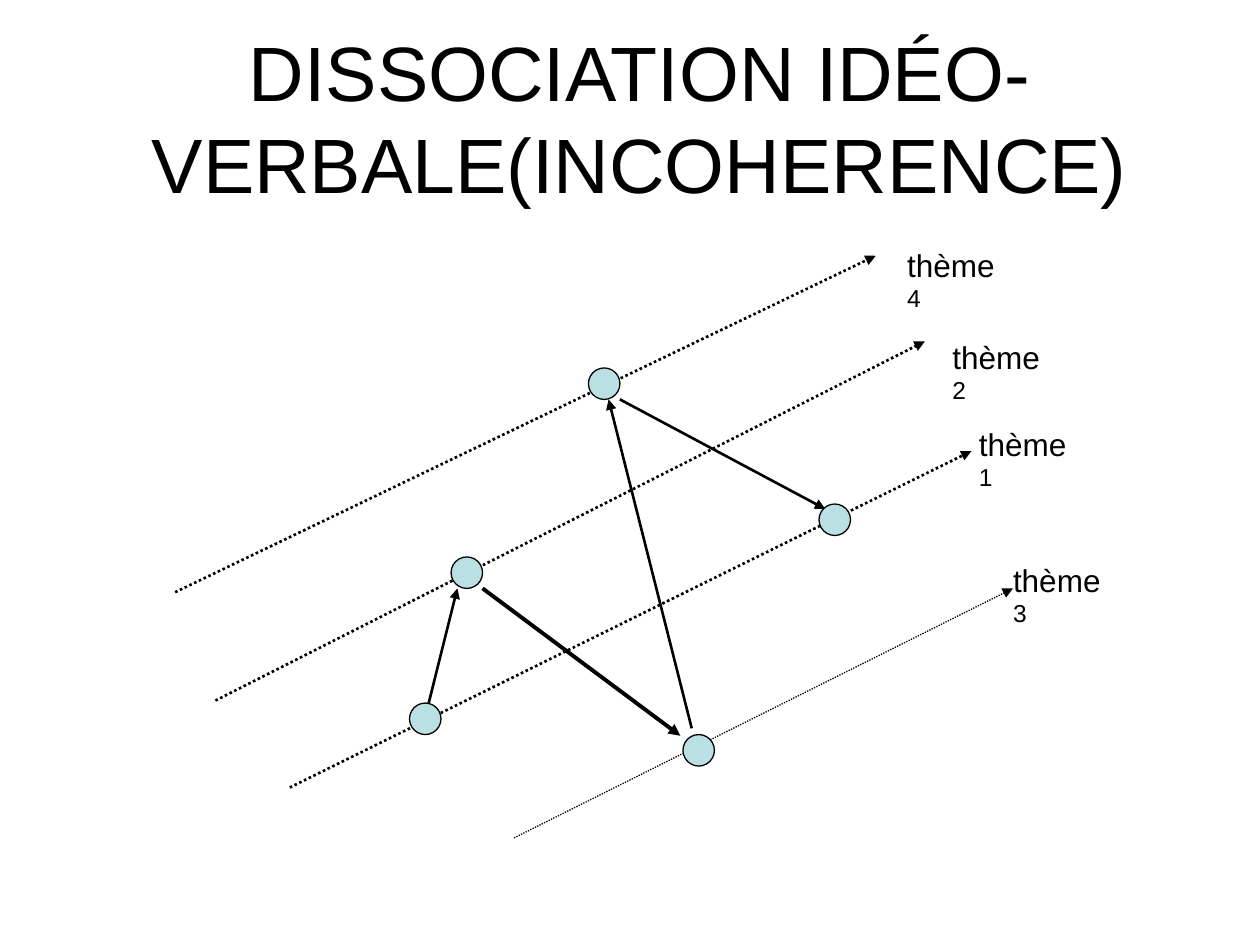
from dataclasses import dataclass

from lxml import etree
from pptx import Presentation
from pptx import util as u
from pptx.dml.color import RGBColor
from pptx.enum import dml, shapes, text
from pptx.oxml.ns import qn

SCALE = 9144  # EMU in one px, 100 px to the inch


@dataclass(frozen=True)
class Theme:
    font: str = "Arial"
    ink: RGBColor = RGBColor(0, 0, 0)
    fill: RGBColor = RGBColor(0xBB, 0xE0, 0xE3)
    title: int = 44
    label: int = 18
    digit: int = 14
    thin: float = 0.75
    line: float = 1.5
    bold: float = 2.25


THEME = Theme()

# number, start, end, label corner, line width
THEMES = [
    (1, (130, 475), (671, 208), (677, 187), THEME.line),
    (2, (71, 406), (634, 121), (656, 118), THEME.line),
    (3, (308, 515), (704, 317), (704, 295), THEME.thin),
    (4, (39, 320), (595, 53), (620, 45), THEME.line),
]
# start, end, line width, in the order of speech
JUMPS = [
    ((238, 417), (263, 317), THEME.line),
    ((283, 317), (440, 434), THEME.bold),
    ((449, 428), (383, 167), THEME.line),
    ((392, 167), (555, 254), THEME.line),
]
NODES = [(225, 408), (258, 292), (442, 433), (367, 142), (550, 250)]
NODE = 25


def px(*nums):
    return [u.Emu(n * SCALE) for n in nums]


def style(font, size):
    font.name = THEME.font
    font.size = u.Pt(size)
    font.color.rgb = THEME.ink


def add_run(para, words, size):
    run = para.add_run()
    run.text = words
    style(run.font, size)


def add_title(slide, box):
    head = slide.shapes.title
    head.left, head.top, head.width, head.height = px(*box)
    frame = head.text_frame
    frame.auto_size = text.MSO_AUTO_SIZE.NONE
    frame.vertical_anchor = text.MSO_ANCHOR.MIDDLE
    para = frame.paragraphs[0]
    para.alignment = text.PP_ALIGN.CENTER
    style(para.font, THEME.title)
    add_run(para, "DISSOCIATION IDÉO-VERBALE(INCOHERENCE)", THEME.title)
    para.add_line_break()


def add_arrow(slide, start, end, width, dotted=False):
    arrow = slide.shapes.add_connector(
        shapes.MSO_CONNECTOR.STRAIGHT, *px(*start, *end))
    arrow.line.color.rgb = THEME.ink
    arrow.line.width = u.Pt(width)
    if dotted:
        arrow.line.dash_style = dml.MSO_LINE.ROUND_DOT
    props = arrow.line._get_or_add_ln()
    etree.SubElement(props, qn("a:tailEnd"), type="triangle")
    etree.SubElement(arrow._element.spPr, qn("a:effectLst"))


def add_label(slide, spot, num):
    """Place a theme name, narrow enough for its number to wrap below."""
    frame = slide.shapes.add_textbox(*px(*spot, 86, 30)).text_frame
    frame.word_wrap = True
    frame.auto_size = text.MSO_AUTO_SIZE.SHAPE_TO_FIT_TEXT
    frame.margin_left = frame.margin_right = 0
    frame.margin_top = frame.margin_bottom = 0
    para = frame.paragraphs[0]
    add_run(para, "thème ", THEME.label)
    add_run(para, str(num), THEME.digit)


def add_node(slide, spot):
    node = slide.shapes.add_shape(
        shapes.MSO_SHAPE.OVAL, *px(*spot, NODE, NODE))
    node.shadow.inherit = False
    node.fill.solid()
    node.fill.fore_color.rgb = THEME.fill
    node.line.color.rgb = THEME.ink
    node.line.width = u.Pt(THEME.thin)


def add_graph(slide, left, top):
    """Draw theme lines, jumps between them and nodes from one corner."""
    def at(spot):
        return left + spot[0], top + spot[1]

    for num, start, end, spot, width in THEMES:
        add_arrow(slide, at(start), at(end), width, dotted=True)
        add_label(slide, at(spot), num)
    for start, end, width in JUMPS:
        add_arrow(slide, at(start), at(end), width)
    for spot in NODES:
        add_node(slide, at(spot))


def main():
    deck = Presentation()
    deck.slide_width, deck.slide_height = px(1000, 750)
    slide = deck.slides.add_slide(deck.slide_layouts[5])
    add_title(slide, (58, 67, 900, 125))
    add_graph(slide, 100, 150)
    deck.save("out.pptx")


if __name__ == "__main__":
    main()
